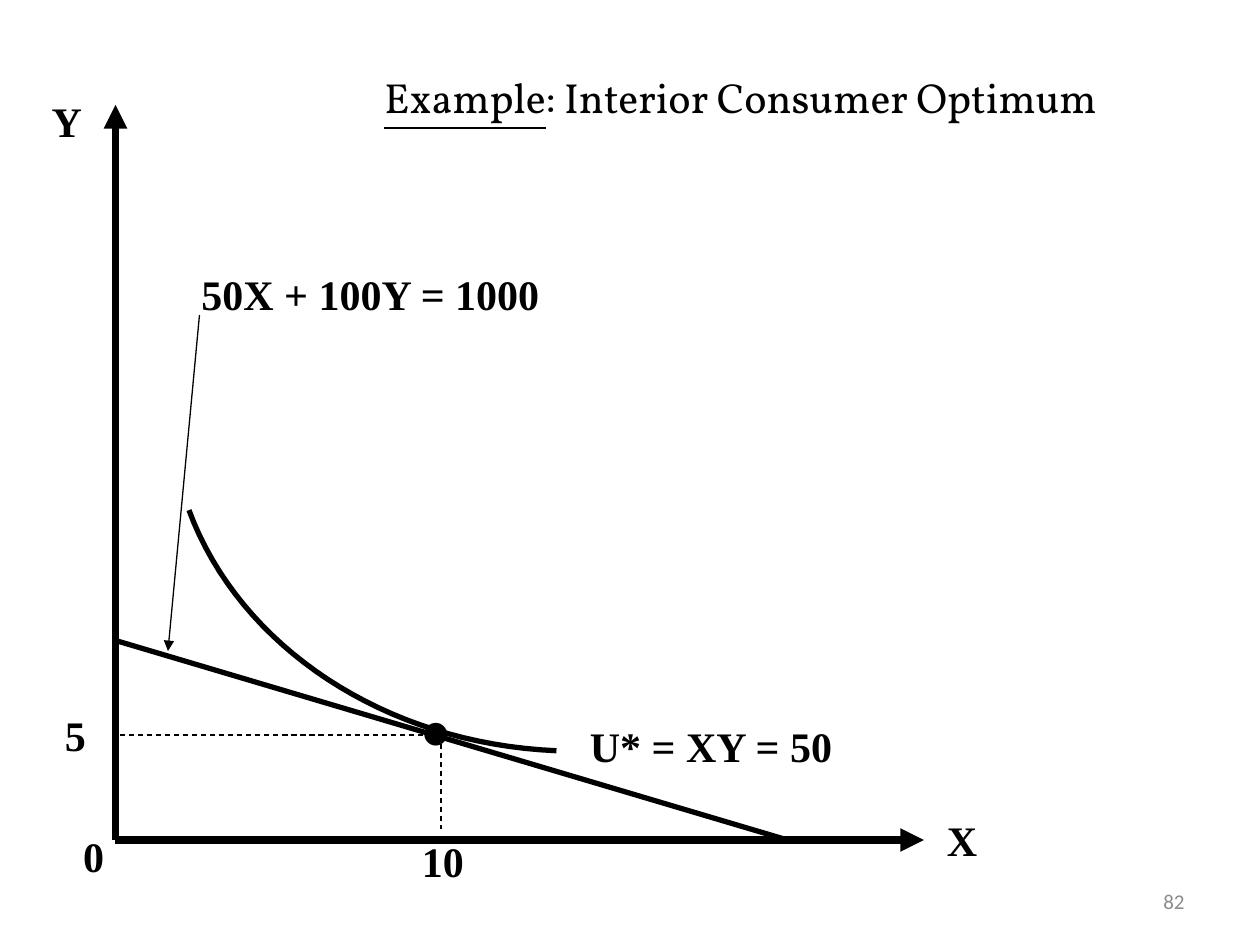
"""Build a slide showing a consumer's interior optimum on a budget line."""
from lxml.etree import SubElement
from pptx import Presentation
from pptx.dml.color import RGBColor
from pptx.enum.dml import MSO_LINE_DASH_STYLE as Dash
from pptx.enum.shapes import MSO_CONNECTOR as Connector
from pptx.enum.text import MSO_ANCHOR as Anchor, MSO_AUTO_SIZE as AutoSize, PP_ALIGN as Align
from pptx.oxml.ns import qn
from pptx.util import Pt

COLORS = {"ink": "000000", "page_number": "8C8C8C"}
ORIGIN = (66, 480)
OPTIMUM = (252, 420)
CURVE_CONTROLS = ((318, 429), (220.5, 425), (137, 370), (108, 291.5))
CURVE_STEPS = 32

LABELS = (
    ("Y", (22.5, 51, 33, 36), 24),
    ("X", (534, 462, 33, 36), 24),
    ("•", (234, 384, 32, 65), 48),
    ("U* = XY = 50", (330, 408, 155, 36), 24),
    ("0", (40.5, 471, 28, 36), 24),
    ("5", (30, 402, 28, 36), 24),
    ("10", (234, 474, 40, 36), 24),
    ("50X + 100Y = 1000", (108, 150, 210, 36), 24),
)


def color(name):
    return RGBColor.from_string(COLORS[name])


def place(shape, box):
    shape.left, shape.top, shape.width, shape.height = map(Pt, box)


def write(paragraph, text, font="Times New Roman", size=24, ink="ink",
          bold=False, underline=False, align=Align.LEFT):
    paragraph.alignment = align
    run = paragraph.add_run()
    run.text = text
    run.font.name = font
    run.font.size = Pt(size)
    run.font.bold = bold
    run.font.underline = underline
    run.font.color.rgb = color(ink)


def add_text(slide, text, box, wrap=False, anchor=Anchor.TOP, **text_format):
    shape = slide.shapes.add_textbox(*map(Pt, box))
    frame = shape.text_frame
    frame.word_wrap = wrap
    frame.vertical_anchor = anchor
    frame.auto_size = AutoSize.NONE if wrap else AutoSize.SHAPE_TO_FIT_TEXT
    write(frame.paragraphs[0], text, **text_format)


def add_title(slide):
    title = slide.shapes.title
    place(title, (212.5, 37.5, 474, 36))
    frame = title.text_frame
    frame.auto_size = AutoSize.NONE
    frame.vertical_anchor = Anchor.TOP
    paragraph = frame.paragraphs[0]
    write(paragraph, "Example", font="Vollkorn", underline=True)
    write(paragraph, ": Interior Consumer Optimum", font="Vollkorn")


def add_line(slide, start, end, width=0.75, dashed=False, arrow=False):
    connector = slide.shapes.add_connector(
        Connector.STRAIGHT, *map(Pt, (*start, *end)))
    line = connector.line
    line.color.rgb = color("ink")
    line.width = Pt(width)
    if dashed:
        line.dash_style = Dash.DASH
    properties = connector.element.spPr
    if arrow:
        SubElement(properties.find(qn("a:ln")), qn("a:tailEnd"), type="triangle")
    SubElement(properties, qn("a:effectLst"))


def bezier_point(controls, t):
    weights = ((1 - t) ** 3, 3 * t * (1 - t) ** 2, 3 * t ** 2 * (1 - t), t ** 3)
    return tuple(Pt(sum(weight * value for weight, value in zip(weights, axis)))
                 for axis in zip(*controls))


def add_curve(slide, controls, width):
    start, *points = [bezier_point(controls, step / CURVE_STEPS)
                      for step in range(CURVE_STEPS + 1)]
    builder = slide.shapes.build_freeform(*start)
    builder.add_line_segments(points, close=False)
    curve = builder.convert_to_shape()
    curve.shadow.inherit = False
    curve.fill.background()
    curve.line.color.rgb = color("ink")
    curve.line.width = Pt(width)


def main():
    presentation = Presentation()
    presentation.slide_width, presentation.slide_height = Pt(720), Pt(540)
    slide = presentation.slides.add_slide(presentation.slide_layouts[5])

    add_title(slide)
    add_text(slide, "82", (516, 500.5, 168, 28.75), wrap=True, anchor=Anchor.MIDDLE,
             font="Calibri", size=12, ink="page_number", align=Align.RIGHT)

    for axis_end in ((528, ORIGIN[1]), (ORIGIN[0], 60)):
        add_line(slide, ORIGIN, axis_end, width=4.5, arrow=True)
    add_line(slide, (ORIGIN[0], 366), (450, ORIGIN[1]), width=3)
    add_curve(slide, CURVE_CONTROLS, width=3)
    for guide_end in ((OPTIMUM[0], 474), (ORIGIN[0], OPTIMUM[1])):
        add_line(slide, OPTIMUM, guide_end, dashed=True)
    add_line(slide, (114, 180), (96, 372), arrow=True)

    for text, box, size in LABELS:
        add_text(slide, text, box, size=size, bold=True)

    presentation.save("out.pptx")


if __name__ == "__main__":
    main()
